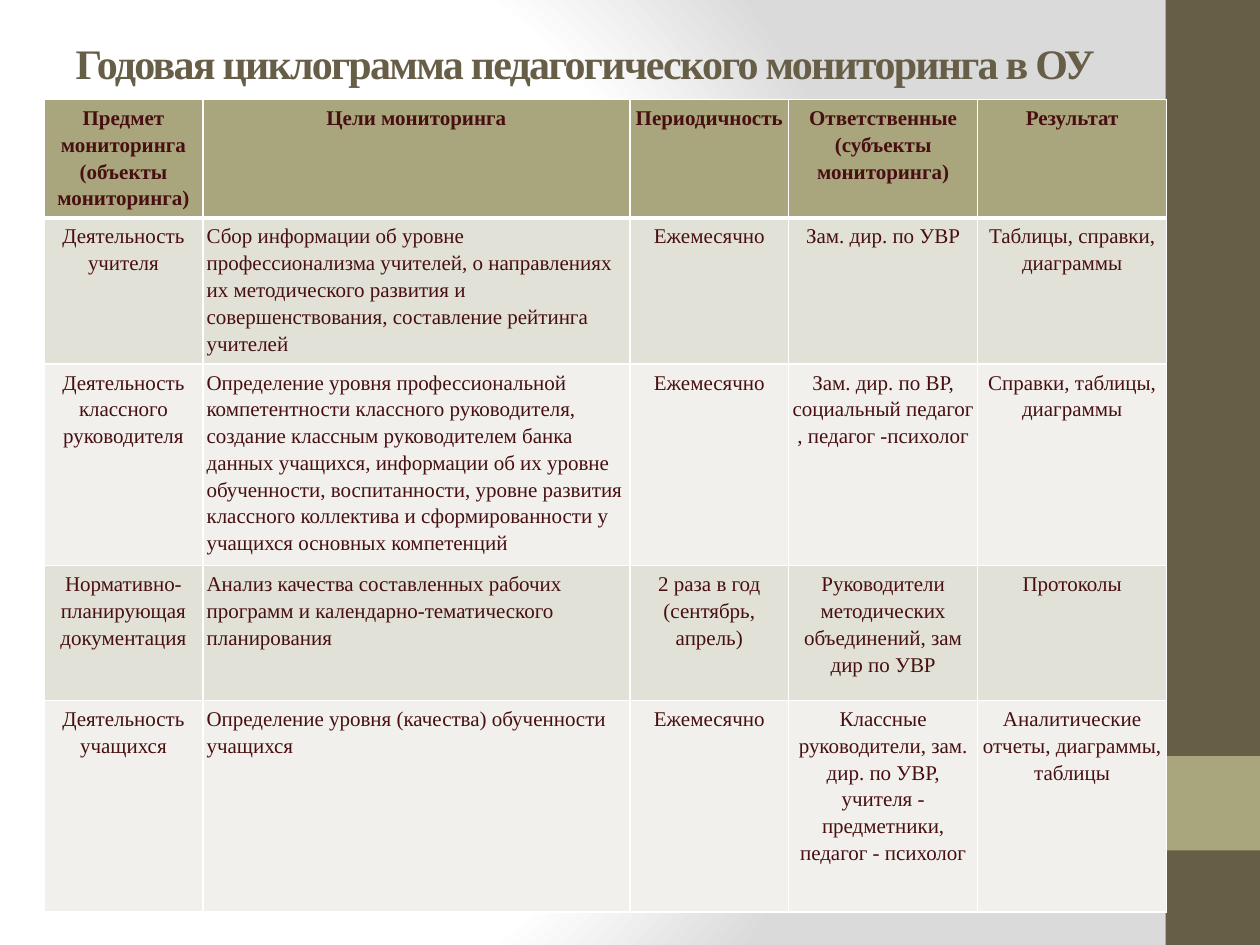
from dataclasses import dataclass

from lxml.etree import SubElement
from pptx import Presentation
from pptx.dml.color import RGBColor
from pptx.enum.shapes import MSO_SHAPE
from pptx.enum.text import MSO_ANCHOR, MSO_AUTO_SIZE, PP_ALIGN
from pptx.oxml import parse_xml
from pptx.oxml.ns import qn
from pptx.util import Inches, Pt


@dataclass(frozen=True)
class Theme:
    font: str = "Times New Roman"
    title_size: int = 24
    table_size: int = 12
    brown: str = "675E47"
    olive: str = "A9A57C"
    text: str = "470F11"
    bands: tuple = ("E2E1D7", "F1F0EC")
    white: str = "FFFFFF"
    gray: str = "DADADA"
    grid_width: int = 1
    header_rule_width: int = 3


TITLE = "Годовая циклограмма педагогического мониторинга в ОУ"
COLUMN_WIDTHS = (1.26, 3.39, 1.26, 1.5, 1.5)
ROW_HEIGHTS = (0.94, 1.16, 1.6, 1.07, 1.68)
GOALS_COLUMN = 1
ROWS = (
    ("Предмет мониторинга (объекты мониторинга)", "Цели мониторинга", "Периодичность",
     "Ответственные (субъекты мониторинга)", "Результат"),
    ("Деятельность учителя",
     "Сбор информации об уровне профессионализма учителей, о направлениях их методического "
     "развития и совершенствования, составление рейтинга учителей",
     "Ежемесячно", "Зам. дир. по УВР", "Таблицы, справки, диаграммы"),
    ("Деятельность классного руководителя",
     "Определение уровня профессиональной компетентности классного руководителя, создание "
     "классным руководителем банка данных учащихся, информации об их уровне обученности, "
     "воспитанности, уровне развития классного коллектива и сформированности у учащихся "
     "основных компетенций",
     "Ежемесячно", "Зам. дир. по ВР, социальный педагог , педагог -психолог",
     "Справки, таблицы, диаграммы"),
    ("Нормативно-планирующая документация",
     "Анализ качества составленных рабочих программ и календарно-тематического планирования",
     "2 раза в год (сентябрь, апрель)",
     "Руководители методических объединений, зам дир по УВР", "Протоколы"),
    ("Деятельность учащихся", "Определение уровня (качества) обученности учащихся",
     "Ежемесячно",
     "Классные руководители, зам. дир. по УВР, учителя - предметники, педагог - психолог",
     "Аналитические отчеты, диаграммы, таблицы"),
)


class SlideBuilder:
    def __init__(self, page, theme):
        self.page = page
        self.theme = theme

    def background(self):
        """Radial gradient, white at its centre and gray at the far side."""
        stops = ((0, self.theme.white), (75, self.theme.white), (100, self.theme.gray))
        stop_xml = "".join(
            f'<a:gs pos="{position * 1000}"><a:srgbClr val="{color}"/></a:gs>'
            for position, color in stops)
        fill = self.page.background.fill
        fill.solid()
        properties = self.page.element.cSld.find(qn("p:bg")).find(qn("p:bgPr"))
        gradient = parse_xml(
            '<a:gradFill xmlns:a="http://schemas.openxmlformats.org/drawingml/2006/main" '
            f'rotWithShape="1"><a:gsLst>{stop_xml}</a:gsLst><a:path path="circle">'
            '<a:fillToRect l="20000" t="50000" r="100000" b="50000"/></a:path></a:gradFill>')
        properties.replace(properties.find(qn("a:solidFill")), gradient)

    def rectangle(self, left, top, width, height, color):
        box = self.page.shapes.add_shape(
            MSO_SHAPE.RECTANGLE, Inches(left), Inches(top), Inches(width), Inches(height))
        box.shadow.inherit = False
        box.fill.solid()
        box.fill.fore_color.rgb = RGBColor.from_string(color)
        box.line.fill.background()

    def style_text(self, para, size, color, bold):
        for span in para.runs:
            span.font.name = self.theme.font
            span.font.size = Pt(size)
            span.font.bold = bold
            span.font.color.rgb = RGBColor.from_string(color)

    def title(self, text, left, top, width, height):
        box = self.page.shapes.title
        box.left, box.top = Inches(left), Inches(top)
        box.width, box.height = Inches(width), Inches(height)
        frame = box.text_frame
        frame.text = text
        frame.auto_size = MSO_AUTO_SIZE.NONE
        frame.vertical_anchor = MSO_ANCHOR.TOP
        frame.margin_top = 0
        para = frame.paragraphs[0]
        para.alignment = PP_ALIGN.LEFT
        self.style_text(para, self.theme.title_size, self.theme.brown, True)
        para.runs[0].font._element.set("spc", "-100")

    def cell_borders(self, cell, row):
        """White grid with a thicker rule between the header and the body."""
        thick = {0: "lnB", 1: "lnT"}.get(row)
        properties = cell._tc.get_or_add_tcPr()
        for index, side in enumerate(("lnL", "lnR", "lnT", "lnB")):
            width = self.theme.header_rule_width if side == thick else self.theme.grid_width
            line = SubElement(properties, qn(f"a:{side}"), w=str(Pt(width)))
            fill = SubElement(line, qn("a:solidFill"))
            SubElement(fill, qn("a:srgbClr"), val=self.theme.white)
            properties.insert(index, line)

    def cell(self, cell, text, row, column):
        is_header = row == 0
        cell.margin_left = cell.margin_right = Inches(0.03)
        cell.margin_top = cell.margin_bottom = Inches(0.03)
        cell.text_frame.text = text
        para = cell.text_frame.paragraphs[0]
        para.line_spacing = 1.15
        is_goal = column == GOALS_COLUMN and not is_header
        para.alignment = PP_ALIGN.LEFT if is_goal else PP_ALIGN.CENTER
        self.style_text(para, self.theme.table_size, self.theme.text, is_header)
        color = self.theme.olive if is_header else self.theme.bands[(row - 1) % 2]
        cell.fill.solid()
        cell.fill.fore_color.rgb = RGBColor.from_string(color)
        self.cell_borders(cell, row)

    def table(self, rows, left, top, widths, heights):
        table = self.page.shapes.add_table(
            len(rows), len(widths), Inches(left), Inches(top),
            Inches(sum(widths)), Inches(sum(heights))).table
        for column, width in zip(table.columns, widths):
            column.width = Inches(width)
        for line, height in zip(table.rows, heights):
            line.height = Inches(height)
        for row, texts in enumerate(rows):
            for column, text in enumerate(texts):
                self.cell(table.cell(row, column), text, row, column)


def main():
    deck = Presentation()
    deck.slide_width, deck.slide_height = Inches(10), Inches(7.5)
    theme = Theme()
    builder = SlideBuilder(deck.slides.add_slide(deck.slide_layouts[5]), theme)
    builder.background()
    builder.rectangle(9.25, 0, 0.75, 7.5, theme.brown)
    builder.rectangle(9.25, 6, 0.75, 0.75, theme.olive)
    builder.title(TITLE, 0.5, 0.3, 8.33, 0.69)
    builder.table(ROWS, 0.35, 0.79, COLUMN_WIDTHS, ROW_HEIGHTS)
    deck.save("out.pptx")


if __name__ == "__main__":
    main()
